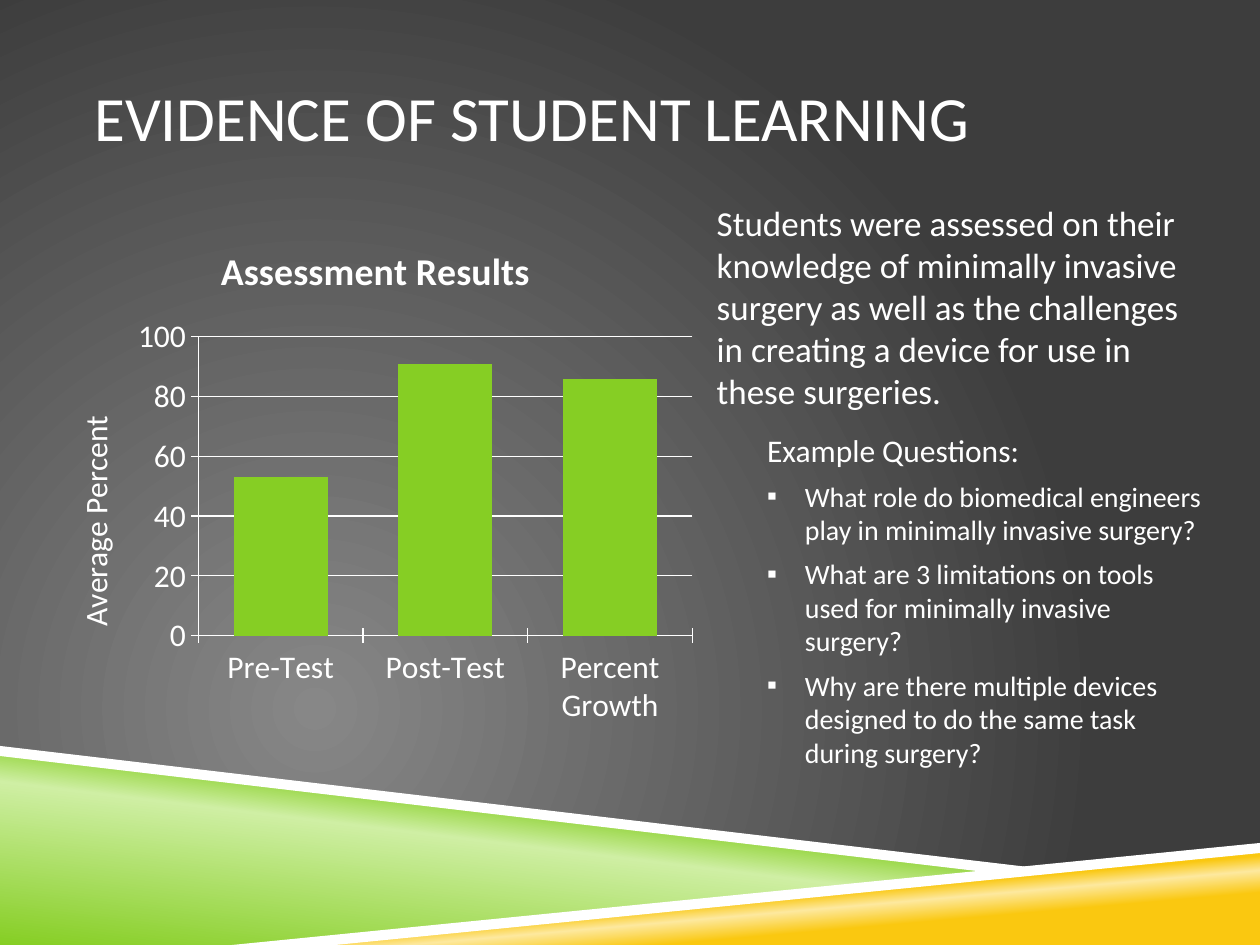
from dataclasses import dataclass

from lxml import etree
from pptx import Presentation
from pptx import util as u
from pptx.chart.data import CategoryChartData
from pptx.dml.color import RGBColor
from pptx.enum import chart as ch, text
from pptx.oxml import ns

FONT = "Calibri"
WHITE, GREEN, YELLOW = "FFFFFF", "86CE24", "FAC810"


@dataclass
class Band:
    points: list[tuple[float, float]]
    stops: list[tuple[int, str]]
    angle: int = 0


@dataclass
class Para:
    text: str
    size: float
    bullet: bool = False


@dataclass
class Box:
    at: tuple[float, float, float, float]
    paras: list[Para]
    frame: dict


BANDS = [
    Band([(0, 5.97), (7.92, 6.92), (2, 7.5), (0, 7.5)],
         [(0, GREEN), (52, "CFEFA4"), (66, GREEN)], 277),
    Band([(1.98, 7.5), (10, 6.72), (10, 7.5)],
         [(28, YELLOW), (40, "FDE99F"), (48, YELLOW)], 265),
    Band([(0, 5.92), (0, 6), (7.9, 6.93), (8.32, 6.9)], [(0, WHITE)]),
    Band([(10, 6.69), (1.84, 7.5), (2.66, 7.5), (10, 6.77)], [(0, WHITE)]),
]

GROW = {"auto_size": text.MSO_AUTO_SIZE.SHAPE_TO_FIT_TEXT}
BOXES = [
    Box((0.75, 0.3, 8.5, 1.25), [Para("EVIDENCE OF STUDENT LEARNING", 36)],
        {"vertical_anchor": text.MSO_ANCHOR.MIDDLE,
         "margin_left": 0, "margin_right": 0}),
    Box((5.59, 1.55, 4.13, 1.78), [
        Para("Students were assessed on their knowledge of minimally invasive "
             "surgery as well as the challenges in creating a device for use "
             "in these surgeries.", 20)], GROW),
    Box((5.99, 3.37, 3.74, 2.84), [
        Para("Example Questions:", 18),
        Para("What role do biomedical engineers play in minimally invasive "
             "surgery?", 16, True),
        Para("What are 3 limitations on tools used for minimally invasive "
             "surgery?", 16, True),
        Para("Why are there multiple devices designed to do the same task "
             "during surgery?", 16, True)], GROW),
]


def rgb(value: str) -> RGBColor:
    return RGBColor.from_string(value)


def apply(obj, values: dict) -> None:
    for name, value in values.items():
        setattr(obj, name, value)


def set_font(font, size: float, bold: bool = False) -> None:
    apply(font, {"name": FONT, "size": u.Pt(size), "bold": bold})
    font.color.rgb = rgb(WHITE)


def add(parent, tag: str, **attrs):
    return etree.SubElement(parent, ns.qn(tag),
                            {k: str(v) for k, v in attrs.items()})


def set_gradient(fill, owner, stops: list[tuple[int, str]]):
    fill.gradient()
    grad = owner.find(".//" + ns.qn("a:gradFill"))
    for child in list(grad):
        grad.remove(child)
    gs_list = add(grad, "a:gsLst")
    for pos, color in stops:
        add(add(gs_list, "a:gs", pos=pos * 1000), "a:srgbClr", val=color)
    return grad


def draw_background(s) -> None:
    grad = set_gradient(s.background.fill, s.element,
                        [(0, "878787"), (100, "3D3D3D")])
    circle = add(grad, "a:path", path="circle")
    add(circle, "a:fillToRect", l=50000, t=100000, r=100000, b=50000)


def draw_band(s, band: Band) -> None:
    points = [(u.Inches(x), u.Inches(y)) for x, y in band.points]
    builder = s.shapes.build_freeform(*points[0])
    builder.add_line_segments(points[1:], close=True)
    sp = builder.convert_to_shape()
    sp.shadow.inherit = False
    sp.line.fill.background()
    if len(band.stops) > 1:
        grad = set_gradient(sp.fill, sp.element, band.stops)
        add(grad, "a:lin", ang=band.angle * 60000, scaled=0)
    else:
        sp.fill.solid()
        sp.fill.fore_color.rgb = rgb(band.stops[0][1])


def draw_box(s, box: Box) -> None:
    tf = s.shapes.add_textbox(*map(u.Inches, box.at)).text_frame
    apply(tf, {"word_wrap": True, **box.frame})
    for i, para in enumerate(box.paras):
        p = tf.add_paragraph() if i else tf.paragraphs[0]
        if para.bullet:
            p.space_before = u.Pt(6)
            pr = p._p.get_or_add_pPr()
            pr.set("marL", str(u.Inches(0.3)))
            pr.set("indent", str(-u.Inches(0.3)))
            add(pr, "a:buFont", typeface=FONT)
            add(pr, "a:buChar", char="▪")
        r = p.add_run()
        r.text = para.text
        set_font(r.font, para.size)


def set_title(owner, words: str, size: float, bold: bool) -> None:
    r = owner.text_frame.paragraphs[0].add_run()
    r.text = words
    set_font(r.font, size, bold)


def draw_chart(s) -> None:
    data = CategoryChartData()
    data.categories = ["Pre-Test", "Post-Test", "Percent Growth"]
    data.add_series("Series 1", [53, 91, 86])
    at = map(u.Inches, (0.36, 1.75, 5.24, 4.08))
    chart = s.shapes.add_chart(ch.XL_CHART_TYPE.COLUMN_CLUSTERED, *at, data).chart
    set_font(chart.font, 18)
    chart.has_legend = False
    set_title(chart.chart_title, "Assessment Results", 21.6, True)
    apply(chart.plots[0], {"gap_width": 75, "vary_by_categories": False})
    fill = chart.plots[0].series[0].format.fill
    fill.solid()
    fill.fore_color.rgb = rgb(GREEN)
    val = chart.value_axis
    apply(val, {"minimum_scale": 0, "maximum_scale": 100, "major_unit": 20,
                "has_major_gridlines": True})
    set_title(val.axis_title, "Average Percent", 18, False)
    for axis in (chart.category_axis, val):
        axis.major_tick_mark = ch.XL_TICK_MARK.CROSS
    for part in (chart.category_axis, val, val.major_gridlines):
        part.format.line.color.rgb = rgb(WHITE)
        part.format.line.width = u.Pt(0.75)


def main() -> None:
    prs = Presentation()
    apply(prs, {"slide_width": u.Inches(10), "slide_height": u.Inches(7.5)})
    s = prs.slides.add_slide(prs.slide_layouts[6])
    draw_background(s)
    for band in BANDS:
        draw_band(s, band)
    draw_chart(s)
    for box in BOXES:
        draw_box(s, box)
    prs.save("out.pptx")


if __name__ == "__main__":
    main()
